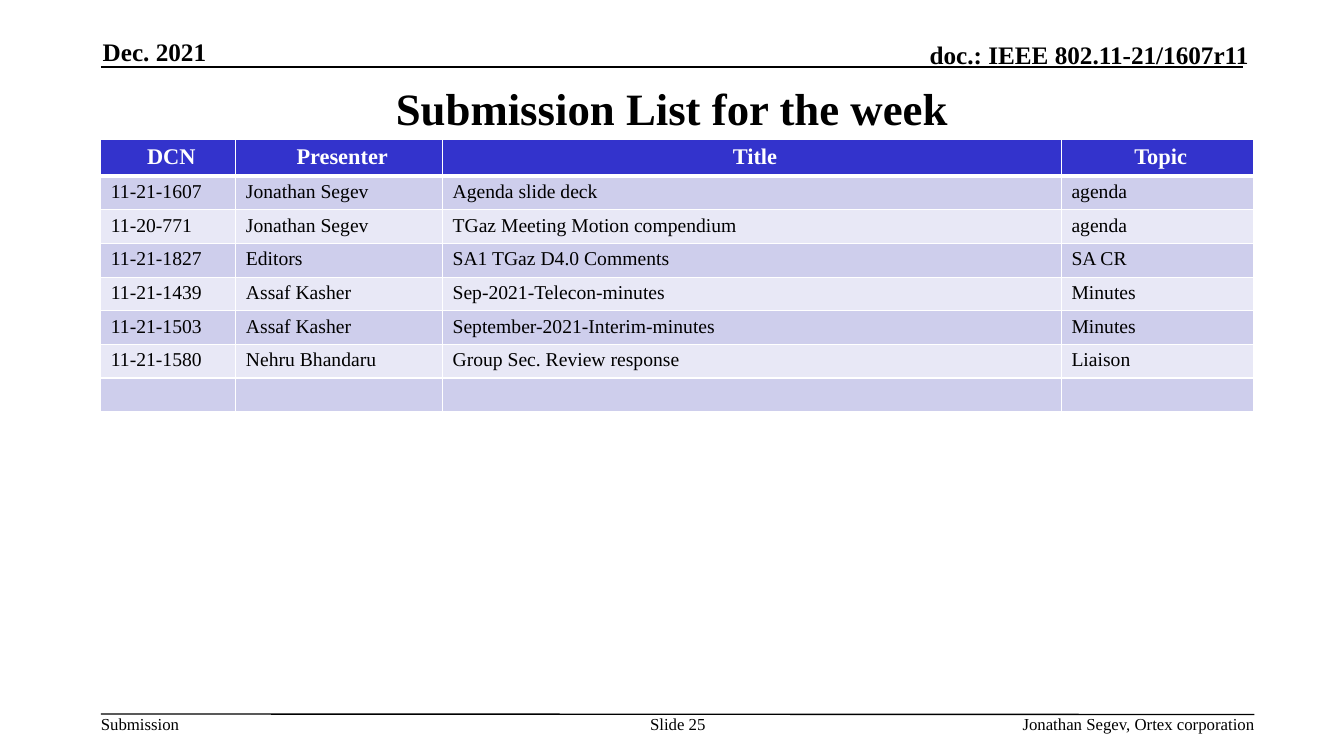
from lxml import etree
from pptx import Presentation
from pptx import util as u
from pptx.dml.color import RGBColor
from pptx.enum import shapes, text
from pptx.oxml.ns import qn

FONT = "Times New Roman"
BLACK, WHITE = "000000", "FFFFFF"
HEADER_FILL, BAND_FILLS = "3333CC", ("CECEEC", "E8E8F6")
LEFT, CENTER, RIGHT = text.PP_ALIGN.LEFT, text.PP_ALIGN.CENTER, text.PP_ALIGN.RIGHT
TOP, BOTTOM = text.MSO_ANCHOR.TOP, text.MSO_ANCHOR.BOTTOM

# Content
TITLE = "Submission List for the week"
SUBMISSIONS = [
    ("DCN", "Presenter", "Title", "Topic"),
    ("11-21-1607", "Jonathan Segev", "Agenda slide deck", "agenda"),
    ("11-20-771", "Jonathan Segev", "TGaz Meeting Motion compendium", "agenda"),
    ("11-21-1827", "Editors", "SA1 TGaz D4.0 Comments", "SA CR"),
    ("11-21-1439", "Assaf Kasher", "Sep-2021-Telecon-minutes", "Minutes"),
    ("11-21-1503", "Assaf Kasher", "September-2021-Interim-minutes", "Minutes"),
    ("11-21-1580", "Nehru Bhandaru", "Group Sec. Review response", "Liaison"),
    ("", "", "", ""),
]
# Text, left, top, width, height, size, bold, alignment, anchor
PAGE_LABELS = [
    ("Dec. 2021", 73.4, 25.9, 196.6, 21.6, 18, True, LEFT, BOTTOM),
    ("doc.: IEEE 802.11-21/1607r11", 525, 28, 367, 21.6, 18, True, RIGHT, BOTTOM),
    ("Submission", 72, 510, 57, 14.4, 12, False, LEFT, TOP),
    ("Slide 25", 456.5, 510, 55.4, 28.8, 12, False, CENTER, TOP),
    ("Jonathan Segev, Ortex corporation", 562, 510, 334.2, 14.4, 12, False, RIGHT, TOP),
]
# Start x, start y, end x, end y
RULES = [(72, 48, 888, 48), (72, 510, 896, 510.4)]
COLUMN_WIDTHS = (96.5, 147.6, 442.1, 137.5)
TABLE_LEFT, TABLE_TOP = 72, 99.4
HEADER_HEIGHT, ROW_HEIGHT = 24.9, 22.7


def color(value):
    return RGBColor.from_string(value)


def write(paragraph, words, size, bold=False, ink=BLACK, align=LEFT):
    paragraph.alignment = align
    run = paragraph.add_run()
    run.text = words
    run.font.name, run.font.size, run.font.bold = FONT, u.Pt(size), bold
    run.font.color.rgb = color(ink)


def set_margins(frame, horizontal, vertical):
    frame.margin_left = frame.margin_right = u.Pt(horizontal)
    frame.margin_top = frame.margin_bottom = u.Pt(vertical)


def add_label(slide, words, left, top, width, height, size, bold, align, anchor):
    box = slide.shapes.add_textbox(u.Pt(left), u.Pt(top), u.Pt(width), u.Pt(height))
    frame = box.text_frame
    frame.word_wrap = True
    frame.vertical_anchor = anchor
    set_margins(frame, 0, 0)
    write(frame.paragraphs[0], words, size, bold, align=align)


def add_rule(slide, *ends):
    line = slide.shapes.add_connector(shapes.MSO_CONNECTOR.STRAIGHT, *map(u.Pt, ends))
    line.line.color.rgb = color(BLACK)
    line.line.width = u.Pt(1)
    etree.SubElement(line._element.spPr, qn("a:effectLst"))


def set_borders(cell, widths):
    properties = cell._tc.get_or_add_tcPr()
    for position, (side, width) in enumerate(widths.items()):
        border = etree.Element(qn(f"a:ln{side}"), w=str(int(u.Pt(width))))
        fill = etree.SubElement(border, qn("a:solidFill"))
        etree.SubElement(fill, qn("a:srgbClr"), val=WHITE)
        properties.insert(position, border)


def add_submission_table(slide):
    row_count = len(SUBMISSIONS)
    height = HEADER_HEIGHT + ROW_HEIGHT * (row_count - 1)
    frame = slide.shapes.add_table(
        row_count, len(COLUMN_WIDTHS), u.Pt(TABLE_LEFT), u.Pt(TABLE_TOP),
        u.Pt(sum(COLUMN_WIDTHS)), u.Pt(height))
    table = frame.table
    for column, width in zip(table.columns, COLUMN_WIDTHS):
        column.width = u.Pt(width)
    for row_index, entries in enumerate(SUBMISSIONS):
        header = row_index == 0
        table.rows[row_index].height = u.Pt(HEADER_HEIGHT if header else ROW_HEIGHT)
        for column_index, words in enumerate(entries):
            cell = table.cell(row_index, column_index)
            cell.fill.solid()
            cell.fill.fore_color.rgb = color(
                HEADER_FILL if header else BAND_FILLS[(row_index - 1) % 2])
            set_margins(cell, 7.2, 3.6)
            if header:
                cell.margin_right = u.Pt(2.9)
            set_borders(cell, {"L": 1, "R": 1, "T": 3 if row_index == 1 else 1,
                               "B": 3 if header else 1})
            paragraph = cell.text_frame.paragraphs[0]
            if header:
                write(paragraph, words, 16, True, WHITE, CENTER)
            elif words:
                write(paragraph, words, 14)
            else:
                # Keep the empty row as low as the others
                etree.SubElement(paragraph._p, qn("a:endParaRPr"), sz="1400")


def main():
    presentation = Presentation()
    presentation.slide_width, presentation.slide_height = u.Pt(960), u.Pt(540)
    slide = presentation.slides.add_slide(presentation.slide_layouts[5])

    # Header and footer
    for rule in RULES:
        add_rule(slide, *rule)
    for label in PAGE_LABELS:
        add_label(slide, *label)

    # Title
    title = slide.shapes.title
    title.left, title.top, title.width, title.height = map(u.Pt, (72, 54, 816, 46))
    frame = title.text_frame
    frame.auto_size = text.MSO_AUTO_SIZE.NONE
    frame.vertical_anchor = text.MSO_ANCHOR.MIDDLE
    set_margins(frame, 7.2, 3.6)
    write(frame.paragraphs[0], TITLE, 32, True, align=CENTER)

    add_submission_table(slide)
    presentation.save("out.pptx")


if __name__ == "__main__":
    main()
